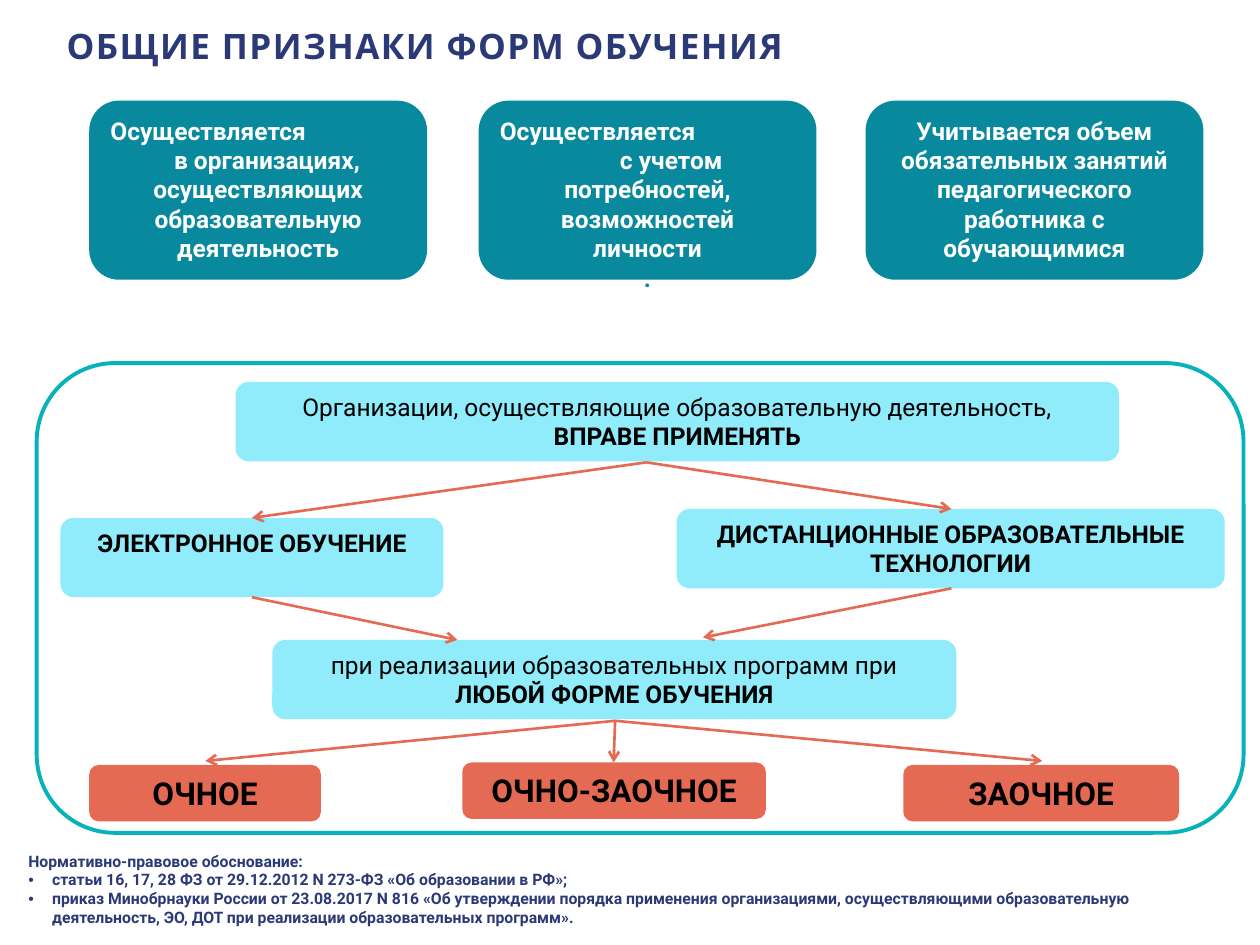
from dataclasses import dataclass
from typing import Optional

from lxml import etree
from pptx import Presentation
from pptx.dml.color import RGBColor
from pptx.enum import shapes, text
from pptx.oxml import ns
from pptx.util import Cm, Pt

NAVY = RGBColor(0x2B, 0x39, 0x77)
TEAL = RGBColor(0x08, 0x89, 0x9D)
TURQUOISE = RGBColor(0x07, 0xB3, 0xB8)
AQUA = RGBColor(0x90, 0xEC, 0xFA)
CORAL = RGBColor(0xE5, 0x6A, 0x54)
BLACK = RGBColor(0, 0, 0)
WHITE = RGBColor(255, 255, 255)
FONT = "Roboto"
CENTER, LEFT = text.PP_ALIGN.CENTER, text.PP_ALIGN.LEFT


@dataclass
class Line:
    """A paragraph made of a regular part followed by a bold part."""
    bold: str = ""
    plain: str = ""
    align: text.PP_ALIGN = CENTER
    indent: float = 0
    color: Optional[RGBColor] = None


@dataclass
class Box:
    x: float
    y: float
    w: float
    lines: list[Line]


@dataclass
class Style:
    h: float
    fill: RGBColor
    color: RGBColor
    size: int


@dataclass
class Fan:
    """Arrows leaving one point."""
    start: tuple[float, float]
    ends: list[tuple[float, float]]


CARD = Style(3.61, TEAL, WHITE, 14)
STEP = Style(1.6, AQUA, BLACK, 14)
FORM = Style(1.14, CORAL, BLACK, 18)

CARDS = [
    Box(1.8, 2.03, 6.81, [
        Line("Осуществляется", align=LEFT),
        Line("в организациях,", indent=0.36),
        Line("осуществляющих образовательную деятельность")]),
    Box(9.65, 2.03, 6.81, [
        Line("Осуществляется", align=LEFT),
        Line("с учетом", indent=0.96),
        Line("потребностей, возможностей"),
        Line("личности"),
        Line(".", color=TEAL)]),
    Box(17.45, 2.03, 6.81, [
        Line("Учитывается объем обязательных занятий педагогического "
             "работника с обучающимися")]),
]
STEPS = [
    Box(4.75, 7.7, 17.81, [
        Line(plain="Организации, осуществляющие образовательную деятельность,"),
        Line("ВПРАВЕ ПРИМЕНЯТЬ")]),
    Box(1.22, 10.44, 7.72, [Line("ЭЛЕКТРОННОЕ ОБУЧЕНИЕ")]),
    Box(13.64, 10.26, 11.05, [Line("ДИСТАНЦИОННЫЕ ОБРАЗОВАТЕЛЬНЫЕ ТЕХНОЛОГИИ")]),
    Box(5.49, 12.9, 13.79, [
        Line("ЛЮБОЙ ФОРМЕ ОБУЧЕНИЯ",
             "при реализации образовательных программ при ")]),
]
FORMS = [
    Box(1.8, 15.42, 4.67, [Line("ОЧНОЕ")]),
    Box(9.32, 15.37, 6.12, [Line("ОЧНО-ЗАОЧНОЕ")]),
    Box(18.21, 15.42, 5.56, [Line("ЗАОЧНОЕ")]),
]
FANS = [
    Fan((13.03, 9.32), [(5.08, 10.44), (19.18, 10.26)]),
    Fan((5.08, 12.04), [(9.22, 12.9)]),
    Fan((19.18, 11.86), [(14.17, 12.85)]),
    Fan((12.4, 14.53), [(4.14, 15.34), (12.37, 15.37), (21.01, 15.34)]),
]
BASIS = [
    "Нормативно-правовое обоснование:",
    "статьи 16, 17, 28 ФЗ от 29.12.2012 N 273-ФЗ «Об образовании в РФ»;",
    "приказ Минобрнауки России от 23.08.2017 N 816 «Об утверждении порядка "
    "применения организациями, осуществляющими образовательную деятельность, "
    "ЭО, ДОТ при реализации образовательных программ».",
]


def place(sp, x: float, y: float, w: float, h: float) -> None:
    sp.left, sp.top, sp.width, sp.height = Cm(x), Cm(y), Cm(w), Cm(h)


def style_font(font, name: str, size: int, color: RGBColor, bold: bool) -> None:
    font.name, font.size, font.bold = name, Pt(size), bold
    font.color.rgb = color


def add_round_rect(s, x: float, y: float, w: float, h: float):
    sp = s.shapes.add_shape(shapes.MSO_SHAPE.ROUNDED_RECTANGLE,
                            Cm(x), Cm(y), Cm(w), Cm(h))
    sp.shadow.inherit = False
    return sp


def add_box(s, box: Box, style: Style) -> None:
    sp = add_round_rect(s, box.x, box.y, box.w, style.h)
    sp.fill.solid()
    sp.fill.fore_color.rgb = style.fill
    sp.line.fill.background()
    tf = sp.text_frame
    tf.word_wrap = True
    tf.vertical_anchor = text.MSO_ANCHOR.TOP
    for i, line in enumerate(box.lines):
        p = tf.paragraphs[0] if i == 0 else tf.add_paragraph()
        p.alignment = line.align
        if line.indent:
            p._p.get_or_add_pPr().set("marL", str(Cm(line.indent)))
        for content, bold in ((line.plain, False), (line.bold, True)):
            if content:
                r = p.add_run()
                r.text = content
                style_font(r.font, FONT, style.size, line.color or style.color, bold)


def add_frame(s) -> None:
    sp = add_round_rect(s, 0.74, 7.32, 24.33, 9.47)
    sp.fill.background()
    sp.line.color.rgb = TURQUOISE
    sp.line.width = Pt(2.25)


def add_arrow(s, start: tuple[float, float], end: tuple[float, float]) -> None:
    c = s.shapes.add_connector(shapes.MSO_CONNECTOR.STRAIGHT,
                               *map(Cm, start), *map(Cm, end))
    c.line.color.rgb = CORAL
    c.line.width = Pt(1.5)
    etree.SubElement(c.line._get_or_add_ln(), ns.qn("a:tailEnd"), type="arrow")
    etree.SubElement(c._element.spPr, ns.qn("a:effectLst"))


def fill_title(sp) -> None:
    place(sp, 1.09, 0, 18.77, 2.01)
    tf = sp.text_frame
    tf.text = "ОБЩИЕ ПРИЗНАКИ ФОРМ ОБУЧЕНИЯ"
    tf.auto_size = text.MSO_AUTO_SIZE.NONE
    tf.vertical_anchor = text.MSO_ANCHOR.MIDDLE
    p = tf.paragraphs[0]
    p.alignment, p.line_spacing = LEFT, 0.8
    font = p.runs[0].font
    style_font(font, "Open Sans", 20, NAVY, True)
    font._element.set("spc", "80")


def fill_basis(sp) -> None:
    """Legal grounds: a heading line and bulleted references."""
    place(sp, 0.38, 16.97, 23.9, 1.93)
    tf = sp.text_frame
    tf.text = "\n".join(BASIS)
    tf.word_wrap = True
    tf.auto_size = text.MSO_AUTO_SIZE.NONE
    tf.vertical_anchor = text.MSO_ANCHOR.TOP
    tf.margin_left = tf.margin_right = tf.margin_top = tf.margin_bottom = Cm(0.19)
    for i, p in enumerate(tf.paragraphs):
        p.alignment = LEFT
        p.space_before = Pt(0)
        pPr = p._p.get_or_add_pPr()
        indent = Cm(0.48) if i else 0
        pPr.set("marL", str(indent))
        pPr.set("indent", str(-indent))
        if i:
            etree.SubElement(pPr, ns.qn("a:buChar"), char="•")
        else:
            etree.SubElement(pPr, ns.qn("a:buNone"))
        style_font(p.runs[0].font, FONT, 9, NAVY, True)


def main() -> None:
    prs = Presentation()
    prs.slide_width, prs.slide_height = Cm(25.4), Cm(19.05)
    s = prs.slides.add_slide(prs.slide_layouts[1])
    fill_title(s.shapes.title)
    fill_basis(s.placeholders[1])
    add_frame(s)
    for boxes, style in ((CARDS, CARD), (STEPS, STEP), (FORMS, FORM)):
        for box in boxes:
            add_box(s, box, style)
    for fan in FANS:
        for end in fan.ends:
            add_arrow(s, fan.start, end)
    prs.save("out.pptx")


if __name__ == "__main__":
    main()
